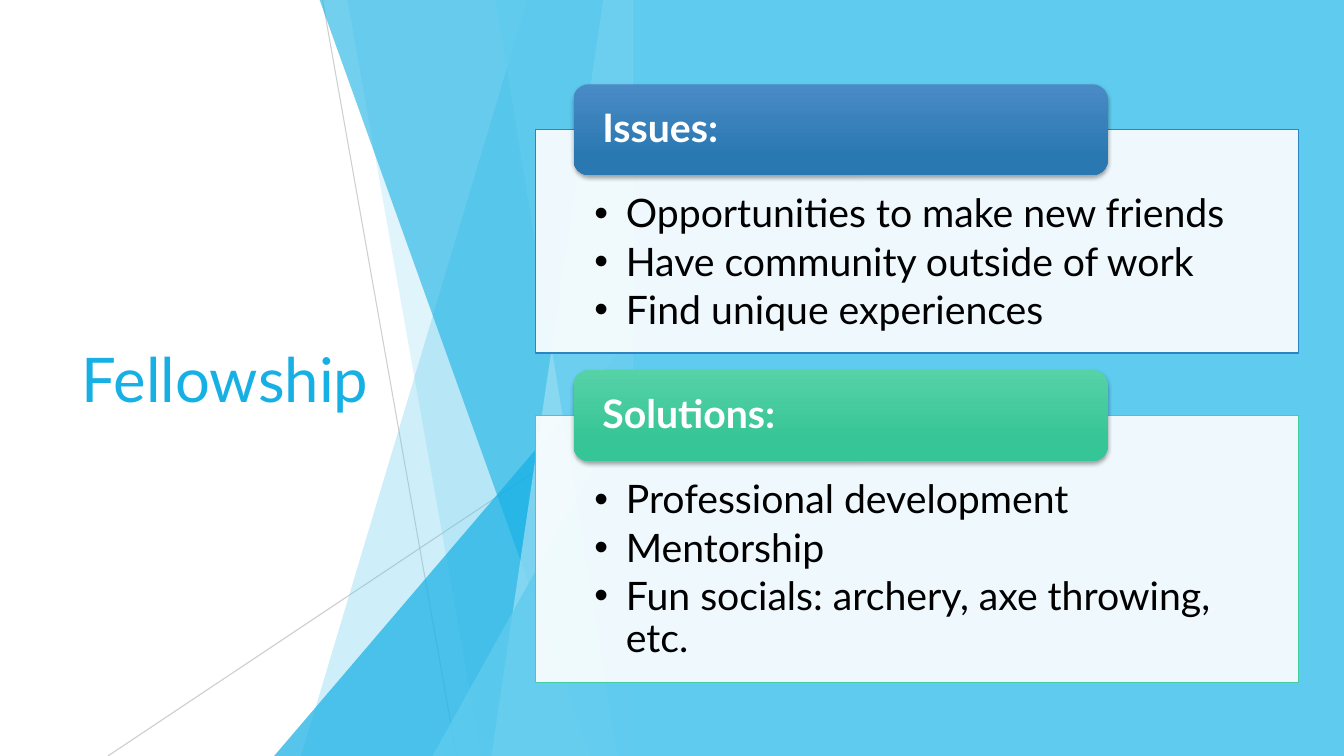
from pptx import Presentation
from pptx.dml.color import RGBColor
from pptx.enum.shapes import MSO_CONNECTOR, MSO_SHAPE
from pptx.enum.text import MSO_ANCHOR, MSO_AUTO_SIZE, PP_ALIGN
from pptx.oxml.ns import qn
from pptx.util import Pt
from lxml.etree import SubElement

WHITE = RGBColor(0xFF, 0xFF, 0xFF)
BLACK = RGBColor(0x00, 0x00, 0x00)
GREY = RGBColor(0xBF, 0xBF, 0xBF)
SKY = RGBColor(0x5F, 0xCB, 0xEF)
PALE_SKY = RGBColor(0x9F, 0xE0, 0xF5)
CYAN = RGBColor(0x17, 0xB0, 0xE4)
BLUE = RGBColor(0x2E, 0x83, 0xC3)
BLUE_TOP = RGBColor(0x4A, 0x8B, 0xC6)
BLUE_BOTTOM = RGBColor(0x2A, 0x78, 0xB2)
GREEN = RGBColor(0x42, 0xD0, 0xA2)
GREEN_TOP = RGBColor(0x56, 0xD2, 0xA7)
GREEN_BOTTOM = RGBColor(0x36, 0xC5, 0x96)

WIDTH, HEIGHT = 960, 540
SPLIT = 452.16
PANEL_LEFT, PANEL_WIDTH = 382.32, 545.04
HEADER_INDENT, HEADER_RISE = 27.36, 32.4
HEADER_WIDTH, HEADER_HEIGHT = 381.6, 64.8


def set_opacity(element, percent):
    color = next(element.iter(qn("a:srgbClr")))
    SubElement(color, qn("a:alpha"), val=str(percent * 1000))


def paint(sp, color, opacity=100):
    sp.shadow.inherit = False
    sp.fill.solid()
    sp.fill.fore_color.rgb = color
    sp.line.fill.background()
    if opacity < 100:
        set_opacity(sp._element.spPr, opacity)


def place(sp, left, top, width, height):
    sp.left, sp.top, sp.width, sp.height = map(Pt, (left, top, width, height))


def add_preset(slide, kind, left, top, width, height):
    return slide.shapes.add_shape(kind, *map(Pt, (left, top, width, height)))


def add_hairline(slide, start, end, opacity):
    line = slide.shapes.add_connector(MSO_CONNECTOR.STRAIGHT, *map(Pt, start + end))
    line.line.color.rgb = GREY
    line.line.width = Pt(0.75)
    set_opacity(line._element.spPr, opacity)
    SubElement(line._element.spPr, qn("a:effectLst"))


def add_band(slide, top_x, bottom_x, color, opacity):
    builder = slide.shapes.build_freeform(top_x, -0.6, scale=Pt(1))
    builder.add_line_segments([(SPLIT, -0.6), (SPLIT, HEIGHT), (bottom_x, HEIGHT)])
    paint(builder.convert_to_shape(), color, opacity)


def add_corner(slide, left, top, color, opacity):
    sp = add_preset(slide, MSO_SHAPE.ISOSCELES_TRIANGLE, left, top, SPLIT - left, HEIGHT - top)
    sp.adjustments[0] = 1
    paint(sp, color, opacity)


def set_text(p, text, size=28, color=BLACK, bold=False, spacing=0.9, after=0):
    p.alignment = PP_ALIGN.LEFT
    p.line_spacing = spacing
    p.space_before = Pt(0)
    p.space_after = Pt(after)
    r = p.add_run()
    r.text = text
    r.font.name = "Lato"
    r.font.size = Pt(size)
    r.font.bold = bold
    r.font.color.rgb = color


def set_frame(tf, anchor, left=7.2, top=3.6, right=7.2, bottom=3.6):
    tf.word_wrap = True
    tf.auto_size = MSO_AUTO_SIZE.NONE
    tf.vertical_anchor = anchor
    tf.margin_left, tf.margin_top = Pt(left), Pt(top)
    tf.margin_right, tf.margin_bottom = Pt(right), Pt(bottom)


def bring_to_front(slide, sp):
    slide.shapes._spTree.append(sp._element)


def add_title(slide, text):
    title = slide.shapes.title
    bring_to_front(slide, title)
    place(title, 51.12, 108.72, 279.36, 322.56)
    set_frame(title.text_frame, MSO_ANCHOR.MIDDLE)
    set_text(title.text_frame.paragraphs[0], text, size=44, color=CYAN, spacing=1.0)


def add_list_panel(slide, body, top, height, items, border):
    bring_to_front(slide, body)
    place(body, PANEL_LEFT, top, PANEL_WIDTH, height)
    body.fill.solid()
    body.fill.fore_color.rgb = WHITE
    set_opacity(body._element.spPr, 90)
    body.line.color.rgb = border
    body.line.width = Pt(1)
    tf = body.text_frame
    set_frame(tf, MSO_ANCHOR.TOP, 42.3, 46, 42.3, 15.7)
    for i, item in enumerate(items):
        p = tf.add_paragraph() if i else tf.paragraphs[0]
        set_text(p, item, after=4.2)
        pPr = p._p.get_or_add_pPr()
        pPr.set("marL", str(Pt(22.5)))
        pPr.set("indent", str(-Pt(22.5)))


def add_header(slide, text, panel_top, top_color, bottom_color):
    sp = add_preset(slide, MSO_SHAPE.ROUNDED_RECTANGLE, PANEL_LEFT + HEADER_INDENT,
                    panel_top - HEADER_RISE, HEADER_WIDTH, HEADER_HEIGHT)
    sp.line.fill.background()
    sp.fill.gradient()
    sp.fill.gradient_angle = 270
    for stop, position, color in zip(sp.fill.gradient_stops, (0, 0.78), (top_color, bottom_color)):
        stop.position = position
        stop.color.rgb = color
    effects = SubElement(sp._element.spPr, qn("a:effectLst"))
    shadow = SubElement(effects, qn("a:outerShdw"), blurRad=str(Pt(3)), dist=str(Pt(2)),
                        dir="5400000", algn="ctr", rotWithShape="0")
    SubElement(shadow, qn("a:srgbClr"), val=str(BLACK))
    set_opacity(shadow, 35)
    set_frame(sp.text_frame, MSO_ANCHOR.MIDDLE, 17.5, 0, 17.5, 0)
    set_text(sp.text_frame.paragraphs[0], text, color=WHITE, bold=True)


def add_facets(slide):
    add_hairline(slide, (230.4, 0), (326.16, HEIGHT), 75)
    add_hairline(slide, (SPLIT, 290.16), (77.04, HEIGHT), 80)
    add_band(slide, 376.56, 215.28, SKY, 30)
    add_band(slide, 248.4, 344.16, SKY, 20)
    add_corner(slide, 195.84, 239.76, CYAN, 72)
    add_band(slide, 227.52, 421.92, CYAN, 60)
    add_band(slide, 430.56, 350.64, PALE_SKY, 70)
    add_band(slide, 353.52, 441.36, SKY, 65)
    add_corner(slide, 308.88, 282.96, SKY, 80)


def main():
    prs = Presentation()
    prs.slide_width, prs.slide_height = Pt(WIDTH), Pt(HEIGHT)
    slide = prs.slides.add_slide(prs.slide_layouts[3])
    issues, solutions = slide.placeholders[1], slide.placeholders[2]

    add_facets(slide)
    add_title(slide, "Fellowship")
    paint(add_preset(slide, MSO_SHAPE.RECTANGLE, SPLIT, 0, WIDTH - SPLIT, HEIGHT), SKY)

    add_list_panel(slide, issues, 92.6, 159.6, [
        "Opportunities to make new friends",
        "Have community outside of work",
        "Find unique experiences",
    ], BLUE)
    add_header(slide, "Issues:", 92.6, BLUE_TOP, BLUE_BOTTOM)

    add_list_panel(slide, solutions, 296.8, 190.8, [
        "Professional development",
        "Mentorship",
        "Fun socials: archery, axe throwing, etc.",
    ], GREEN)
    add_header(slide, "Solutions:", 296.8, GREEN_TOP, GREEN_BOTTOM)

    prs.save("out.pptx")


if __name__ == "__main__":
    main()
